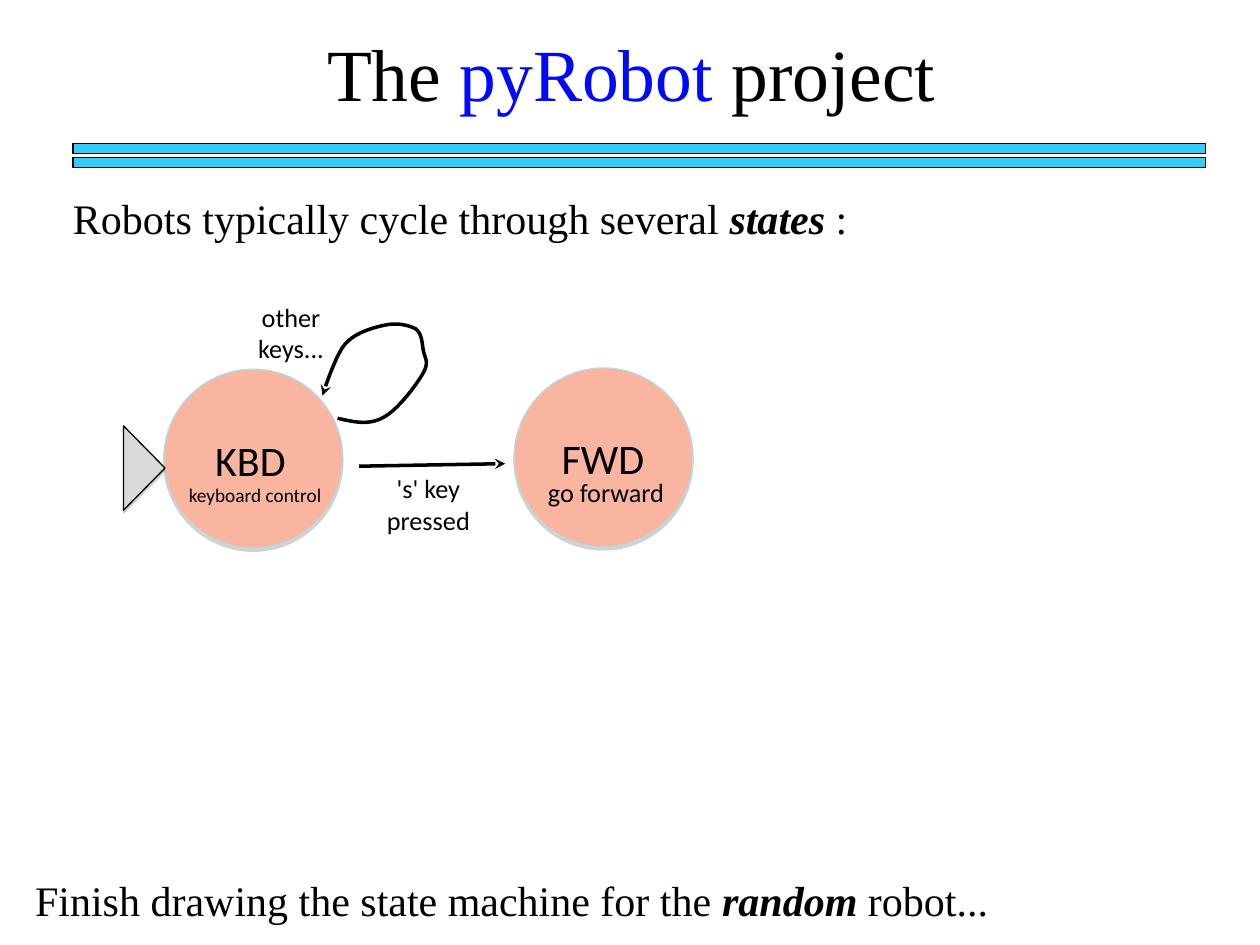
from dataclasses import dataclass
from typing import NamedTuple

from lxml import etree
from pptx import Presentation
from pptx import util as u
from pptx.dml.color import RGBColor
from pptx.enum import shapes, text
from pptx.oxml.ns import qn


@dataclass(frozen=True)
class Theme:
    serif: str = "Times New Roman"
    sans: str = "Calibri"
    black: str = "000000"
    title_blue: str = "000AF9"
    bar: str = "33CCFF"
    state: str = "F9B5A0"
    state_edge: str = "B6DCDF"
    start: str = "D9D9D9"
    shadow: str = "808080"
    title: float = 42
    body: float = 24
    label: float = 15
    small: float = 11
    thin: float = 0.75
    thick: float = 2


THEME = Theme()
ALIGN = text.PP_ALIGN


class Span(NamedTuple):
    text: str
    color: str = THEME.black
    strong: bool = False


class Label(NamedTuple):
    at: tuple[float, float, float, float]
    spans: list[Span]
    size: float
    font: str = THEME.sans
    align: ALIGN = ALIGN.LEFT
    wrap: bool = False


class Block(NamedTuple):
    kind: shapes.MSO_SHAPE
    at: tuple[float, float, float, float]
    fill: str
    edge: str
    rotation: float = 0
    shadow: bool = True


BLOCKS = [
    *(Block(shapes.MSO_SHAPE.RECTANGLE, (0.58, top, 8.99, 0.08), THEME.bar,
            THEME.black, shadow=False) for top in (1.14, 1.25)),
    *(Block(shapes.MSO_SHAPE.OVAL, (left, top, 1.42, 1.42), THEME.state,
            THEME.state_edge) for left, top in ((1.3, 2.93), (4.08, 2.92))),
    Block(shapes.MSO_SHAPE.ISOSCELES_TRIANGLE, (0.81, 3.55, 0.67, 0.33),
          THEME.start, THEME.black, rotation=90),
]

TITLE = Label((1.26, 0.17, 7.5, 0.8),
              [Span("The "), Span("pyRobot", THEME.title_blue), Span(" project")],
              THEME.title, THEME.serif, ALIGN.CENTER, True)

LABELS = [
    Label((0.48, 1.47, 6.41, 0.51),
          [Span("Robots typically cycle through several "),
           Span("states ", strong=True), Span(":")], THEME.body, THEME.serif),
    Label((0.18, 6.89, 7.91, 0.5),
          [Span("Finish drawing the state machine for the "),
           Span("random ", strong=True), Span("robot...")],
          THEME.body, THEME.serif, wrap=True),
    Label((1.61, 3.39, 0.77, 0.51), [Span("KBD")], THEME.body),
    Label((4.36, 3.37, 0.86, 0.51), [Span("FWD")], THEME.body),
    Label((4.25, 3.73, 1.13, 0.35), [Span("go forward")], THEME.label),
    Label((1.26, 3.78, 1.53, 0.29), [Span("keyboard control")], THEME.small,
          align=ALIGN.CENTER, wrap=True),
    Label((2.93, 3.7, 0.94, 0.6), [Span("'s' key pressed")], THEME.label,
          align=ALIGN.CENTER, wrap=True),
    Label((1.84, 2.33, 0.94, 0.61), [Span("other keys...")], THEME.label,
          align=ALIGN.CENTER, wrap=True),
]

LOOP_START = (2.68, 3.32)
LOOP_CURVES = [
    ((2.81, 3.35), (2.93, 3.38), (3.05, 3.31)),
    ((3.16, 3.25), (3.31, 3.05), (3.36, 2.96)),
    ((3.41, 2.87), (3.37, 2.84), (3.36, 2.78)),
    ((3.35, 2.72), (3.35, 2.65), (3.3, 2.61)),
    ((3.24, 2.58), (3.15, 2.56), (3.06, 2.58)),
    ((2.96, 2.6), (2.82, 2.64), (2.74, 2.73)),
    ((2.66, 2.82), (2.56, 3.14), (2.56, 3.14)),
]
CURVE_STEPS = 10


def inches(values) -> list[u.Length]:
    return [u.Inches(value) for value in values]


def rgb(color: str) -> RGBColor:
    return RGBColor.from_string(color)


def set_all(target, values: dict) -> None:
    for name, value in values.items():
        setattr(target, name, value)


def write_text(box, label: Label) -> None:
    frame = box.text_frame
    set_all(frame, {"word_wrap": label.wrap, "auto_size": text.MSO_AUTO_SIZE.NONE,
                    "vertical_anchor": text.MSO_ANCHOR.BOTTOM})
    para = frame.paragraphs[0]
    para.alignment = label.align
    for part in label.spans:
        span = para.add_run()
        span.text = part.text
        set_all(span.font, {"name": label.font, "size": u.Pt(label.size),
                            "bold": part.strong, "italic": part.strong})
        span.font.color.rgb = rgb(part.color)


def draw_title(page, label: Label) -> None:
    box = page.shapes.title
    set_all(box, dict(zip(("left", "top", "width", "height"), inches(label.at))))
    write_text(box, label)


def add_shadow(shape) -> None:
    """Fill the shape's empty effect list with a hard shadow straight below."""
    effects = shape._element.spPr.find(qn("a:effectLst"))
    shadow = etree.SubElement(effects, qn("a:outerShdw"), blurRad="0",
                              dist=str(u.Pt(1.8)), dir="5400000", rotWithShape="0")
    color = etree.SubElement(shadow, qn("a:srgbClr"), val=THEME.shadow)
    etree.SubElement(color, qn("a:alpha"), val="35000")


def draw_block(page, block: Block) -> None:
    shape = page.shapes.add_shape(block.kind, *inches(block.at))
    shape.rotation = block.rotation
    shape.fill.solid()
    shape.fill.fore_color.rgb = rgb(block.fill)
    shape.line.color.rgb = rgb(block.edge)
    shape.line.width = u.Pt(THEME.thin)
    shape.shadow.inherit = False
    if block.shadow:
        add_shadow(shape)


def style_arrow(arrow) -> None:
    arrow.line.color.rgb = rgb(THEME.black)
    arrow.line.width = u.Pt(THEME.thick)
    properties = arrow._element.spPr
    etree.SubElement(properties.find(qn("a:ln")), qn("a:tailEnd"), type="stealth")
    etree.SubElement(properties, qn("a:effectLst"))


def curve_points(start, curves) -> list[tuple[u.Length, u.Length]]:
    """Sample a chain of cubic Bézier curves."""
    points = []
    for first, second, end in curves:
        for step in range(1, CURVE_STEPS + 1):
            t = step / CURVE_STEPS
            weights = ((1 - t) ** 3, 3 * t * (1 - t) ** 2, 3 * t * t * (1 - t), t ** 3)
            corners = (start, first, second, end)
            points.append(tuple(
                u.Inches(sum(w * corner[axis] for w, corner in zip(weights, corners)))
                for axis in (0, 1)))
        start = end
    return points


def draw_arrows(page) -> None:
    builder = page.shapes.build_freeform(*inches(LOOP_START))
    builder.add_line_segments(curve_points(LOOP_START, LOOP_CURVES), close=False)
    loop = builder.convert_to_shape()
    loop.fill.background()
    style_arrow(loop)
    style_arrow(page.shapes.add_connector(
        shapes.MSO_CONNECTOR.STRAIGHT, *inches((2.85, 3.7, 4.01, 3.68))))


def main() -> None:
    deck = Presentation()
    deck.slide_width, deck.slide_height = inches((10, 7.5))
    page = deck.slides.add_slide(deck.slide_layouts.get_by_name("Title Only"))
    draw_title(page, TITLE)
    for block in BLOCKS:
        draw_block(page, block)
    draw_arrows(page)
    for label in LABELS:
        write_text(page.shapes.add_textbox(*inches(label.at)), label)
    deck.save("out.pptx")


if __name__ == "__main__":
    main()
